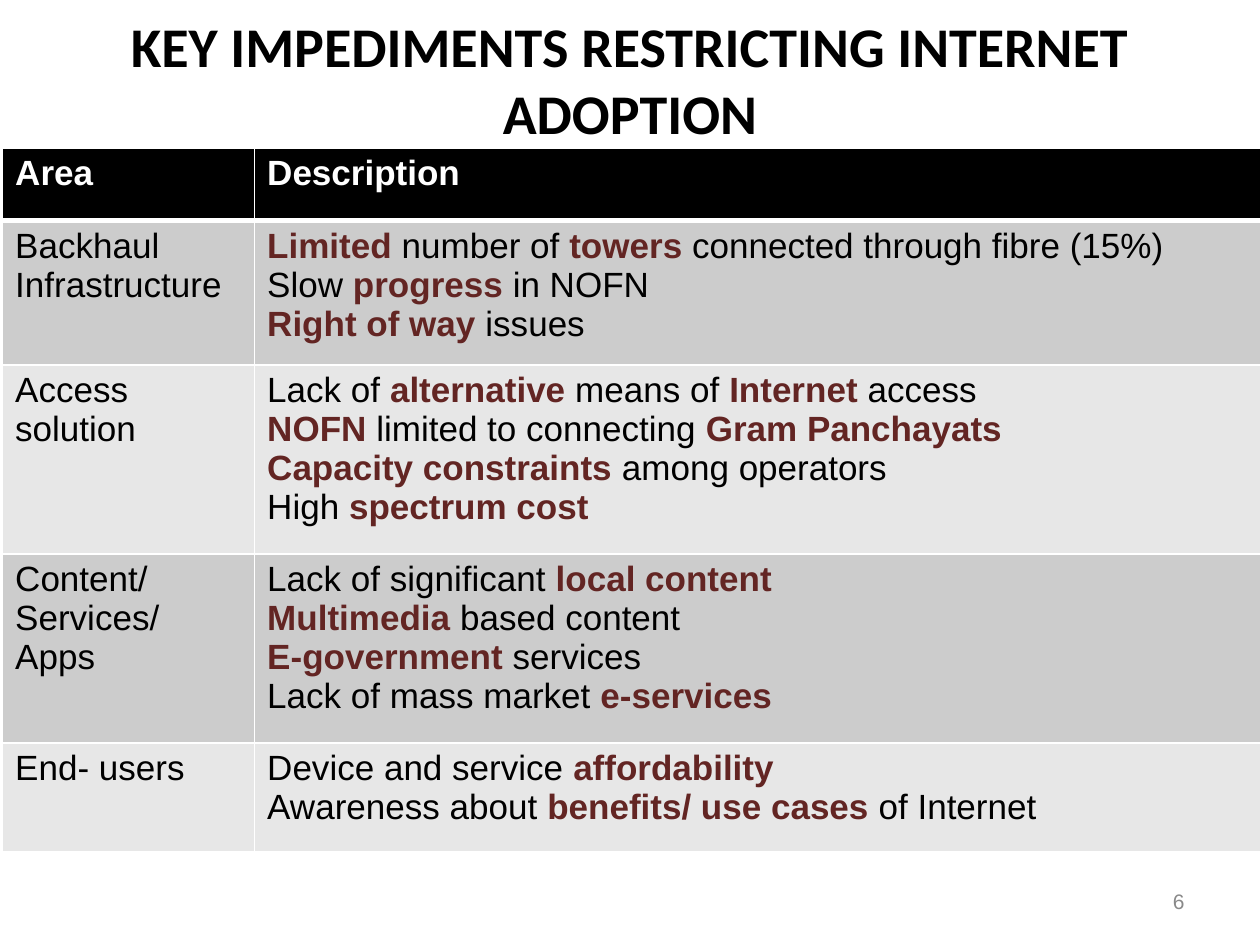
from lxml.etree import SubElement
from pptx import Presentation
from pptx.dml.color import RGBColor
from pptx.enum.text import MSO_ANCHOR as Anchor, MSO_AUTO_SIZE as AutoSize, PP_ALIGN as Align
from pptx.oxml.ns import qn
from pptx.util import Pt

BLACK, WHITE, MAROON, GREY = "000000", "FFFFFF", "632523", "898989"
BAND_FILLS = ["CCCCCC", "E7E7E7"]


def color(hex_string):
    return RGBColor.from_string(hex_string)


def write(frame, text, size=20, font="Arial", text_color=BLACK, bold=False,
          align=Align.LEFT, anchor=Anchor.TOP):
    """Fill a text frame; each line is a paragraph, *starred* words are bold maroon."""
    frame.word_wrap = True
    frame.vertical_anchor = anchor
    for index, line in enumerate(text.split("\n")):
        paragraph = frame.paragraphs[0] if index == 0 else frame.add_paragraph()
        paragraph.alignment = align
        for position, part in enumerate(line.split("*")):
            if not part:
                continue
            emphasis = position % 2 == 1
            run = paragraph.add_run()
            run.text = part
            run.font.size = Pt(size)
            run.font.name = font
            run.font.bold = bold or emphasis
            run.font.color.rgb = color(MAROON if emphasis else text_color)


presentation = Presentation()
presentation.slide_width, presentation.slide_height = Pt(720), Pt(540)
slide = presentation.slides.add_slide(presentation.slide_layouts[5])

# Title
title = slide.shapes.title
title.left, title.top, title.width, title.height = Pt(0), Pt(0), Pt(720), Pt(90)
title.text_frame.auto_size = AutoSize.NONE
write(title.text_frame, "KEY IMPEDIMENTS RESTRICTING INTERNET ADOPTION", size=32,
      font="Calibri", bold=True, align=Align.CENTER, anchor=Anchor.MIDDLE)

# Table of impediments: row height, area, description
rows = [
    (41.5, "Area", "Description"),
    (82.5, "Backhaul Infrastructure",
     "*Limited* number of *towers* connected through fibre (15%)\n"
     "Slow *progress* in NOFN\n"
     "*Right of way *issues"),
    (108, "Access solution",
     "Lack of *alternative* means of *Internet* access\n"
     "*NOFN* limited to connecting *Gram Panchayats*\n"
     "*Capacity constraints *among operators\n"
     "High *spectrum cost*"),
    (108, "Content/ Services/ Apps",
     "Lack of significant *local content*\n"
     "*Multimedia *based content\n"
     "*E-government *services\n"
     "Lack of mass market* e-services*"),
    (62, "End- users",
     "Device and service *affordability*\n"
     "Awareness about *benefits/ use cases *of Internet"),
]
table_height = sum(row[0] for row in rows)
table = slide.shapes.add_table(len(rows), 2, Pt(1.5), Pt(84.5), Pt(720), Pt(table_height)).table
table.columns[0].width, table.columns[1].width = Pt(144), Pt(576)

for row_index, (height, *texts) in enumerate(rows):
    table.rows[row_index].height = Pt(height)
    is_header = row_index == 0
    # The line below the header is thicker than the others
    border_widths = {"a:lnL": 1, "a:lnR": 1, "a:lnT": 3 if row_index == 1 else 1,
                     "a:lnB": 3 if is_header else 1}
    for column_index, text in enumerate(texts):
        cell = table.cell(row_index, column_index)
        write(cell.text_frame, text, bold=is_header, text_color=WHITE if is_header else BLACK)
        properties = cell._tc.get_or_add_tcPr()
        for tag, width in border_widths.items():
            border = SubElement(properties, qn(tag), w=str(Pt(width)))
            border_fill = SubElement(border, qn("a:solidFill"))
            SubElement(border_fill, qn("a:srgbClr"), val=WHITE)
        cell.fill.solid()
        cell.fill.fore_color.rgb = color(BLACK if is_header else BAND_FILLS[(row_index - 1) % 2])

# Slide number
number_box = slide.shapes.add_textbox(Pt(516), Pt(500.5), Pt(168), Pt(28.75))
write(number_box.text_frame, "6", size=12, text_color=GREY, align=Align.RIGHT, anchor=Anchor.MIDDLE)

presentation.save("out.pptx")
